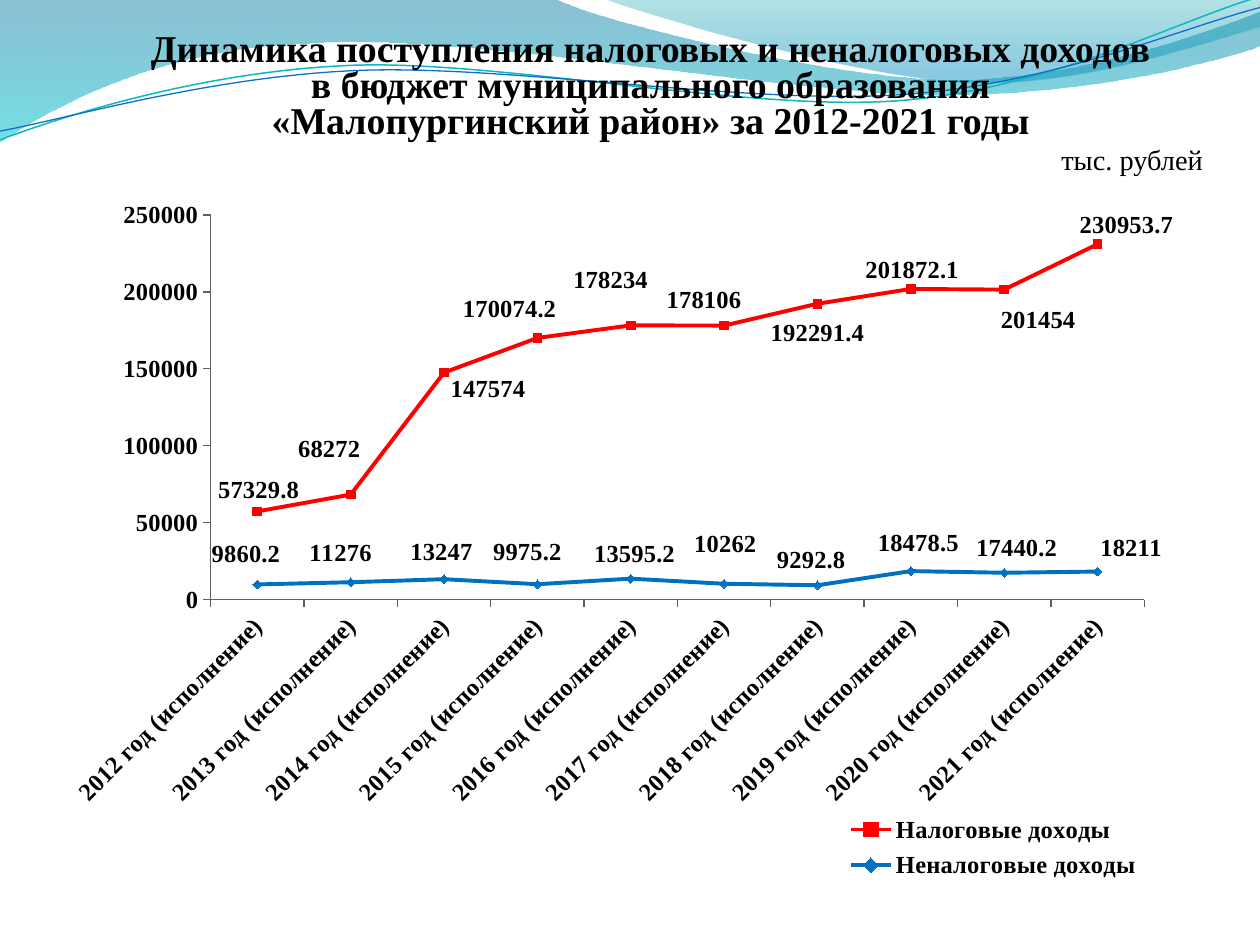
from lxml import etree
from pptx import Presentation
from pptx.chart.data import CategoryChartData
from pptx.dml.color import RGBColor
from pptx.enum.chart import XL_CHART_TYPE as Kind, XL_LABEL_POSITION as Spot
from pptx.enum.chart import XL_LEGEND_POSITION as Side, XL_MARKER_STYLE as Mark, XL_TICK_MARK as Tick
from pptx.enum.text import MSO_ANCHOR as Anchor, PP_ALIGN as Align
from pptx.oxml import parse_xml
from pptx.oxml.ns import nsdecls, qn
from pptx.util import Inches, Pt

BLACK = RGBColor(0, 0, 0)
GRAY = RGBColor(0x60, 0x60, 0x60)
RED = RGBColor(0xFF, 0, 0)
BLUE = RGBColor(0, 0x70, 0xC0)
TEAL = RGBColor(0x0A, 0xB8, 0xBF)
NAVY = RGBColor(0x0F, 0x6F, 0xC6)
FACE = "Times New Roman"
WIDE, HIGH = 9.5, 5.75


def set_font(font, size, bold=True):
    font.name, font.size, font.bold = FACE, Pt(size), bold
    font.color.rgb = BLACK


def add_layout(node, at, **vals):
    lay = etree.Element(qn("c:layout"))
    man = etree.SubElement(lay, qn("c:manualLayout"))
    for tag, val in vals.items():
        etree.SubElement(man, qn("c:" + tag)).set("val", str(val))
    for old in node.findall(qn("c:layout")):
        node.remove(old)
    node.insert(at, lay)


prs = Presentation()
prs.slide_width, prs.slide_height = Inches(10), Inches(7.5)
slide = prs.slides.add_slide(prs.slide_layouts[6])

waves = [
    ([(0, 0), (4.4, -0.01), (4.76, 0.17, 6.64, 0.63, 7.58, 0.63),
      (8.53, 0.63, 9.58, 0.26, 10, 0.09), (10.01, 0.36),
      (9.83, 0.44, 8.7, 0.76, 7.46, 0.75), (6.22, 0.75, 3.82, 0.28, 2.57, 0.34),
      (1.29, 0.36, 0.46, 0.83, -0.01, 1.13), (0, 0)],
     [(0, "0074A1", 45), (100, "00C6CF", 55)], None, 0),
    ([(4.79, -0.01), (5.09, 0.11, 6.82, 0.62, 7.69, 0.65),
      (8.56, 0.69, 9.61, 0.32, 10, 0.21), (10, 0), (4.79, -0.01)],
     [(0, "00A1A9", 30), (80, "008BBF", 45)], None, 0),
    ([(0, 1.11), (0.48, 0.93, 1.58, 0.57, 2.77, 0.52),
      (3.95, 0.47, 5.93, 0.89, 7.13, 0.8), (8.33, 0.71, 9.38, 0.15, 9.98, -0.02)],
     None, TEAL, 0.85),
    ([(0, 1.04), (0.47, 0.96, 1.64, 0.61, 2.83, 0.56),
      (4.03, 0.51, 5.97, 0.84, 7.17, 0.75), (8.36, 0.67, 9.41, 0.21, 10, 0.06)],
     None, NAVY, 0.75),
]
for segs, stops, color, width in waves:
    dots = [(Inches(seg[i]), Inches(seg[i + 1])) for seg in segs for i in range(0, len(seg), 2)]
    pen = slide.shapes.build_freeform(*dots[0])
    pen.add_line_segments(dots[1:], close=bool(stops))
    wave = pen.convert_to_shape()
    steps = iter(list(wave.element.iter(qn("a:lnTo"))))
    for seg in segs[1:]:
        step = next(steps)
        if len(seg) == 6:
            bend = etree.Element(qn("a:cubicBezTo"))
            step.addprevious(bend)
            for part in (step, next(steps), next(steps)):
                bend.append(part[0])
                part.getparent().remove(part)
    wave.shadow.inherit = False
    wave.fill.background()
    if stops:
        wave.line.fill.background()
        marks = "".join(
            f'<a:gs pos="{pos * 1000}"><a:srgbClr val="{tint}">'
            f'<a:alpha val="{alpha * 1000}"/></a:srgbClr></a:gs>'
            for pos, tint, alpha in stops)
        props = wave.element.spPr
        props.replace(props.find(qn("a:noFill")), parse_xml(
            f'<a:gradFill {nsdecls("a")}><a:gsLst>{marks}</a:gsLst>'
            '<a:lin ang="5400000" scaled="0"/></a:gradFill>'))
    else:
        wave.line.color.rgb = color
        wave.line.width = Pt(width)

rows = [
    ("Налоговые доходы", RED, Mark.SQUARE,
     [57329.8, 68272, 147574, 170074.2, 178234, 178106, 192291.4, 201872.1, 201454, 230953.7],
     [(0.01, -0.17), (-0.17, -0.36), (0.35, 0.13), (-0.22, -0.23), (-0.16, -0.36),
      (-0.16, -0.2), (0, 0.23), (0.01, -0.15), (0.27, 0.24), (0.23, -0.15)]),
    ("Неналоговые доходы", BLUE, Mark.DIAMOND,
     [9860.2, 11276, 13247, 9975.2, 13595.2, 10262, 9292.8, 18478.5, 17440.2, 18211],
     [(-0.09, -0.24), (-0.08, -0.23), (-0.02, -0.22), (-0.08, -0.26), (0.03, -0.2),
      (0.01, -0.32), (-0.05, -0.2), (0.06, -0.22), (0.1, -0.2), (0.27, -0.19)]),
]
data = CategoryChartData()
data.categories = [f"{year} год (исполнение)" for year in range(2012, 2022)]
for name, color, mark, vals, shifts in rows:
    data.add_series(name, vals)
chart = slide.shapes.add_chart(
    Kind.LINE_MARKERS, Inches(0), Inches(1.58), Inches(WIDE), Inches(HIGH), data).chart
set_font(chart.font, 18, False)
chart.font.name = "Cambria"
chart.has_title = False
chart.has_legend = True
chart.legend.position = Side.RIGHT
chart.legend.include_in_layout = False
set_font(chart.legend.font, 14)
add_layout(chart.legend._element, 1, xMode="edge", yMode="edge", x=0.7, y=0.84, w=0.26, h=0.11)
area = chart._chartSpace.chart.plotArea
add_layout(area, 0, layoutTarget="inner", xMode="edge", yMode="edge",
           x=0.176, y=0.022, w=0.78, h=0.531)

for axis in (chart.category_axis, chart.value_axis):
    axis.has_major_gridlines = False
    axis.major_tick_mark = Tick.OUTSIDE
    axis.minor_tick_mark = Tick.NONE
    axis.format.line.color.rgb = GRAY
    set_font(axis.tick_labels.font, 14)
turn = chart.category_axis._element.find(qn("c:txPr")).find(qn("a:bodyPr"))
turn.set("rot", "-2700000")
turn.set("vert", "horz")
chart.value_axis.minimum_scale = 0
chart.value_axis.maximum_scale = 250000
chart.value_axis.major_unit = 50000

for line, (name, color, mark, vals, shifts) in zip(chart.plots[0].series, rows):
    line.smooth = False
    line.format.line.color.rgb = color
    line.format.line.width = Pt(2.25)
    line.marker.style = mark
    line.marker.size = 5
    line.marker.format.fill.solid()
    line.marker.format.fill.fore_color.rgb = color
    line.marker.format.line.color.rgb = color
    tags = line.data_labels
    tags.show_value = True
    tags.position = Spot.CENTER
    set_font(tags.font, 14)
    for i in range(len(vals)):
        tag = line.points[i].data_label
        set_font(tag.font, 14)
        tag.position = Spot.CENTER
    for node, (dx, dy) in zip(line._element.iter(qn("c:dLbl")), shifts):
        add_layout(node, 1, x=round(dx / WIDE, 4), y=round(dy / HIGH, 4))
    group = line._element.find(qn("c:dLbls"))
    lead = group.find(qn("c:showLeaderLines"))
    if lead is None:
        lead = etree.SubElement(group, qn("c:showLeaderLines"))
    lead.set("val", "0")

title = ["Динамика поступления налоговых и неналоговых доходов",
         "в бюджет муниципального образования",
         "«Малопургинский район» за 2012-2021 годы"]
frame = slide.shapes.add_textbox(
    Inches(0.33), Inches(0.5), Inches(9.67), Inches(1.5)).text_frame
frame.word_wrap = True
frame.vertical_anchor = Anchor.BOTTOM
frame.margin_left = frame.margin_right = 0
frame.margin_top, frame.margin_bottom = Inches(0.05), Inches(0.6)
head, unit = frame.paragraphs[0], frame.add_paragraph()
for i, text in enumerate(title):
    if i:
        head.add_line_break()
    head.add_run().text = text
unit.text = "тыс. рублей"
unit.space_before = Pt(4)
unit._p.get_or_add_pPr().set("marL", str(Inches(7.64)))
for para, size, bold in ((head, 21.6, True), (unit, 16.2, False)):
    para.alignment = Align.CENTER
    para.line_spacing = 0.8
    set_font(para.font, size, bold)

prs.save("out.pptx")
